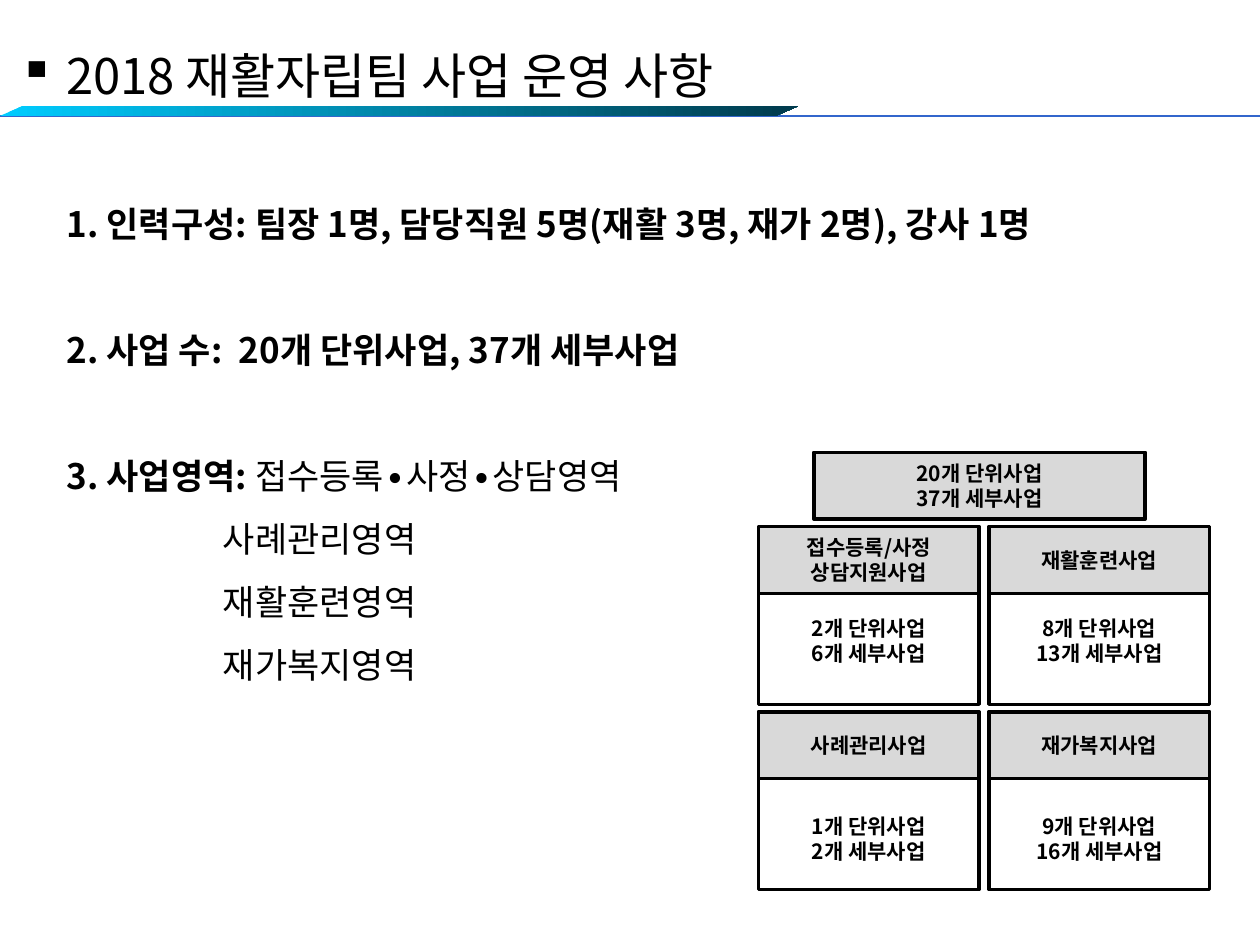
from typing import NamedTuple

from lxml import etree
from pptx import Presentation
from pptx import util as u
from pptx.dml.color import RGBColor
from pptx.enum import shapes, text
from pptx.oxml.ns import qn

BLACK = RGBColor(0x00, 0x00, 0x00)
GRAY = RGBColor(0xD9, 0xD9, 0xD9)
BLUE = RGBColor(0x33, 0x66, 0xCC)
CYAN = RGBColor(0x00, 0xCC, 0xFF)
TEAL = RGBColor(0x00, 0x3A, 0x4C)
FONT = "Noto Sans CJK KR"
WIDE, HEAD, TALL = 1.75, 0.53, 1.41
LEFT, TOP = 6.02, 4.18
STEP_X, STEP_Y = 1.83, 1.47


class Run(NamedTuple):
    words: str
    bold: bool = True


class Item(NamedTuple):
    runs: list[Run]
    left: float = 0.5
    first: float = -0.5
    gap: float = 0


class Area(NamedTuple):
    col: int
    row: int
    name: list[str]
    units: int
    tasks: int


ITEMS = [
    Item([Run("1. 인력구성: 팀장 1명, 담당직원 5명(재활 3명, 재가 2명), 강사 1명")]),
    Item([Run("2. 사업 수:  20개 단위사업, 37개 세부사업")], gap=36),
    Item([Run("3. 사업영역: "), Run("접수등록∙사정∙상담영역", False)], gap=36),
] + [
    Item([Run(name, False)], left=1.24, first=0)
    for name in ("사례관리영역", "재활훈련영역", "재가복지영역")
]

AREAS = [
    Area(0, 0, ["접수등록/사정", "상담지원사업"], 2, 6),
    Area(1, 0, ["재활훈련사업"], 8, 13),
    Area(0, 1, ["사례관리사업"], 1, 2),
    Area(1, 1, ["재가복지사업"], 9, 16),
]


def add_run(para, words: str, size: float, bold: bool = False) -> None:
    run = para.add_run()
    run.text = words
    font = run.font
    font.name, font.size, font.bold = FONT, u.Pt(size), bold
    font.color.rgb = BLACK
    for tag in ("a:ea", "a:cs"):
        etree.SubElement(run._r.rPr, qn(tag), typeface=FONT)


def count(units: int, tasks: int) -> list[str]:
    return [f"{units}개 단위사업", f"{tasks}개 세부사업"]


def add_box(group, x: float, y: float, w: float, h: float,
            lines: list[str], fill: RGBColor | None = None,
            inset: float = 0.05) -> None:
    box = group.shapes.add_shape(
        shapes.MSO_SHAPE.RECTANGLE,
        u.Inches(x), u.Inches(y), u.Inches(w), u.Inches(h))
    box.shadow.inherit = False
    if fill is None:
        box.fill.background()
    else:
        box.fill.solid()
        box.fill.fore_color.rgb = fill
    box.line.color.rgb = BLACK
    box.line.width = u.Pt(2)
    frame = box.text_frame
    frame.word_wrap = True
    frame.vertical_anchor = text.MSO_ANCHOR.MIDDLE
    frame.margin_top = u.Inches(inset)
    for i, line in enumerate(lines):
        para = frame.add_paragraph() if i else frame.paragraphs[0]
        para.alignment = text.PP_ALIGN.CENTER
        add_run(para, line, 12, True)


def add_title(slide) -> None:
    rule = slide.shapes.add_connector(
        shapes.MSO_CONNECTOR.STRAIGHT,
        u.Inches(0), u.Inches(0.92), u.Inches(10), u.Inches(0.92))
    rule.line.color.rgb = BLUE
    rule.line.width = u.Pt(0.75)
    etree.SubElement(rule._element.spPr, qn("a:effectLst"))

    title = slide.shapes.add_textbox(
        u.Inches(0.05), u.Inches(0.31), u.Inches(6.34), u.Inches(0.57))
    title.text_frame.word_wrap = False
    para = title.text_frame.paragraphs[0]
    etree.SubElement(para._p.get_or_add_pPr(), qn("a:buChar"), char="▪")
    add_run(para, " 2018 재활자립팀 사업 운영 사항", 28)

    bar = slide.shapes.add_shape(
        shapes.MSO_SHAPE.PARALLELOGRAM,
        u.Inches(0), u.Inches(0.84), u.Inches(6.34), u.Inches(0.08))
    bar.shadow.inherit = False
    bar.adjustments[0] = 2.3
    bar.line.fill.background()
    bar.fill.gradient()
    bar.fill.gradient_angle = 0
    for stop, color in zip(bar.fill.gradient_stops, (CYAN, TEAL)):
        stop.color.rgb = color


def add_list(slide) -> None:
    body = slide.shapes.add_textbox(
        u.Inches(0.43), u.Inches(1.39), u.Inches(8.82), u.Inches(4.14))
    frame = body.text_frame
    frame.word_wrap = True
    for i, item in enumerate(ITEMS):
        para = frame.add_paragraph() if i else frame.paragraphs[0]
        para.line_spacing = 1.5
        para.space_before = u.Pt(item.gap)
        prop = para._p.get_or_add_pPr()
        prop.set("marL", str(u.Inches(item.left)))
        prop.set("indent", str(u.Inches(item.first)))
        for run in item.runs:
            add_run(para, run.words, 20, run.bold)


def add_chart(slide) -> None:
    group = slide.shapes.add_group_shape()
    for area in AREAS:
        x = LEFT + area.col * STEP_X
        y = TOP + area.row * STEP_Y
        add_box(group, x, y, WIDE, TALL, count(area.units, area.tasks),
                inset=0.45 + 0.2 * area.row)
        add_box(group, x, y, WIDE, HEAD, area.name, GRAY)
    add_box(group, 6.46, 3.59, 2.63, HEAD, count(20, 37), GRAY)


def main() -> None:
    deck = Presentation()
    deck.slide_width, deck.slide_height = u.Inches(10), u.Inches(7.5)
    slide = deck.slides.add_slide(deck.slide_layouts[6])
    add_title(slide)
    add_list(slide)
    add_chart(slide)
    deck.save("out.pptx")


if __name__ == "__main__":
    main()
